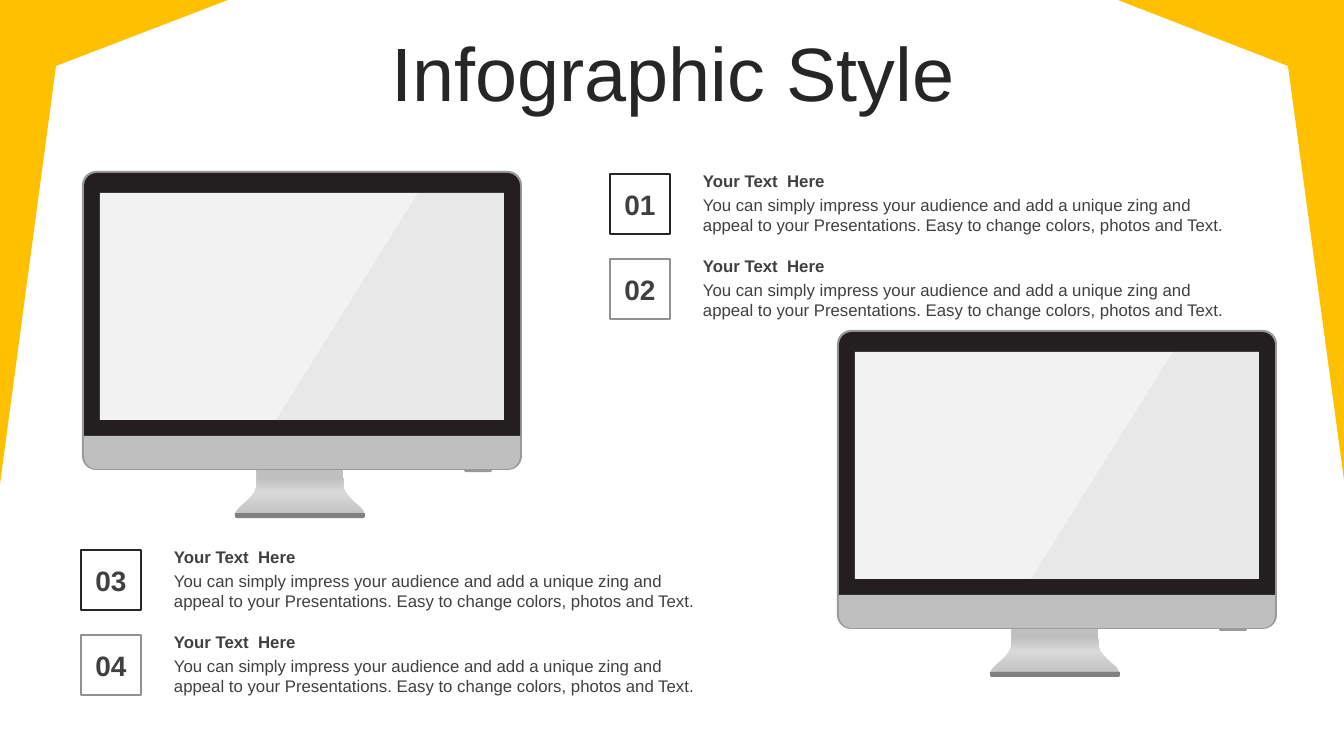
import copy

import pptx
import pptx.dml.color
import pptx.enum.shapes
import pptx.enum.text
import pptx.oxml
import pptx.oxml.ns
import pptx.util
from lxml import etree

SHAPES = pptx.enum.shapes.MSO_SHAPE
ALIGN = pptx.enum.text.PP_ALIGN
ANCHOR = pptx.enum.text.MSO_ANCHOR
SLIDE_WIDTH, SLIDE_HEIGHT = 1344, 756
EMU_PER_PX = 12192000 / SLIDE_WIDTH

HEADING = "Your Text  Here"
DESCRIPTION = (
    "You can simply impress your audience and add a unique zing and "
    "appeal to your Presentations. Easy to change colors, photos and Text."
)


def emu(px):
    return pptx.util.Emu(round(px * EMU_PER_PX))


def color(hex_string):
    return pptx.dml.color.RGBColor.from_string(hex_string)


def bezier(start, control_1, control_2, end, steps=10):
    points = []
    for step in range(steps + 1):
        t = step / steps
        weights = ((1 - t) ** 3, 3 * t * (1 - t) ** 2, 3 * t * t * (1 - t), t ** 3)
        corners = (start, control_1, control_2, end)
        points.append(tuple(sum(w * p[axis] for w, p in zip(weights, corners))
                            for axis in (0, 1)))
    return points


class InfographicSlide:
    """Draw the elements of an infographic slide in one shared style."""

    font = "Arial"
    dark, text_gray, light_gray = "262626", "404040", "929292"
    yellow, silver, edge, bezel = "FFC000", "BFBFBF", "999999", "231F20"
    foot, screen, shine = "808080", "F2F2F2", "D9D9D9"

    def __init__(self, slide):
        self.slide = slide

    def set_text(self, shape, text, size, hex_string, bold=False, align=ALIGN.LEFT):
        frame = shape.text_frame
        frame.word_wrap = True
        frame.text = text
        paragraph = frame.paragraphs[0]
        paragraph.alignment = align
        font = paragraph.runs[0].font
        font.name, font.size, font.bold = self.font, pptx.util.Pt(size), bold
        font.color.rgb = color(hex_string)
        return paragraph

    def text(self, left, top, width, height, text, size, hex_string, **style):
        box = self.slide.shapes.add_textbox(*map(emu, (left, top, width, height)))
        return box, self.set_text(box, text, size, hex_string, **style)

    def title(self, text):
        box, paragraph = self.text(35, 37, 1276, 80, text, 54, self.dark, align=ALIGN.CENTER)
        box.text_frame.vertical_anchor = ANCHOR.MIDDLE
        paragraph.line_spacing = 0.9
        paragraph.space_before = pptx.util.Pt(10)

    def preset(self, kind, left, top, width, height, hex_string, radius=0, rotation=0):
        shape = self.slide.shapes.add_shape(kind, *map(emu, (left, top, width, height)))
        shape.shadow.inherit = False
        shape.fill.solid()
        shape.fill.fore_color.rgb = color(hex_string)
        shape.line.fill.background()
        shape.rotation = rotation
        if radius:
            shape.adjustments[0] = radius / min(width, height)
        return shape

    def outline(self, points, hex_string, alpha=None):
        points = [(emu(x), emu(y)) for x, y in points]
        builder = self.slide.shapes.build_freeform(*points[0])
        builder.add_line_segments(points[1:], close=True)
        shape = builder.convert_to_shape()
        shape.shadow.inherit = False
        shape.line.fill.background()
        shape.fill.solid()
        shape.fill.fore_color.rgb = color(hex_string)
        if alpha is not None:
            fill_color = shape._element.spPr.find(".//" + pptx.oxml.ns.qn("a:srgbClr"))
            etree.SubElement(fill_color, pptx.oxml.ns.qn("a:alpha"), val=str(alpha * 1000))
        return shape

    def stand(self, left, top):
        right_side = bezier((261, 299), (261, 320), (261, 320), (270, 329))
        right_side += bezier((270, 329), (279, 338), (294, 347), (268, 347))[1:]
        left_side = [(436 - x, y) for x, y in reversed(right_side)]
        points = [(left + x, top + y) for x, y in right_side + left_side]
        shape = self.outline(points, self.silver)
        shape.fill.gradient()
        shape.fill.gradient_angle = 90
        stop_list = shape._element.spPr.find(".//" + pptx.oxml.ns.qn("a:gsLst"))
        for stop in list(stop_list):
            stop_list.append(copy.deepcopy(stop))
        stops = ((0, self.silver), (0.53, self.shine), (0.83, self.silver), (1, self.silver))
        for stop, (position, hex_string) in zip(shape.fill.gradient_stops, stops):
            stop.position = position
            stop.color.rgb = color(hex_string)

    def monitor(self, left, top):
        half_round = SHAPES.ROUND_2_SAME_RECTANGLE
        self.stand(left, top)
        self.preset(SHAPES.ROUNDED_RECTANGLE, left, top, 440, 299, self.edge, 14)
        self.preset(half_round, left + 382, top + 297, 28, 4, self.edge, 2, 180)
        self.preset(half_round, left + 2, top + 2, 436, 264, self.bezel, 13)
        self.preset(half_round, left + 153, top + 342, 130, 5, self.foot, 2, 180)
        self.preset(half_round, left + 2, top + 265, 436, 33, self.silver, 13, 180)
        self.preset(SHAPES.RECTANGLE, left + 18, top + 22, 404, 227, self.screen)
        glare = ((336, 22), (422, 22), (422, 249), (194, 249))
        self.outline([(left + x, top + y) for x, y in glare], self.edge, alpha=10)

    def item(self, left, top, number, border):
        square = self.preset(SHAPES.RECTANGLE, left, top, 60, 60, self.screen)
        square.fill.background()
        square.line.color.rgb = color(border)
        square.line.width = pptx.util.Pt(2)
        self.set_text(square, number, 20, self.text_gray, bold=True, align=ALIGN.CENTER)
        square.text_frame.vertical_anchor = ANCHOR.MIDDLE
        self.text(left + 83, top + 16, 563, 50, DESCRIPTION, 12, self.text_gray)
        self.text(left + 83, top - 8, 563, 30, HEADING, 12, self.text_gray, bold=True)


def main():
    presentation = pptx.Presentation()
    presentation.slide_width = emu(SLIDE_WIDTH)
    presentation.slide_height = emu(SLIDE_HEIGHT)
    page = InfographicSlide(presentation.slides.add_slide(presentation.slide_layouts[6]))

    for left, top in ((82, 171), (837, 330)):
        page.monitor(left, top)
    page.title("Infographic Style")
    for group, (left, top) in enumerate(((610, 174), (81, 550))):
        for row, border in enumerate((page.dark, page.light_gray)):
            page.item(left, top + 85 * row, f"{2 * group + row + 1:02d}", border)
    page.outline(((1118, 0), (1344, 0), (1344, 480), (1288, 66)), page.yellow)
    page.outline(((0, 0), (228, 0), (56, 66), (0, 484)), page.yellow)

    presentation.save("out.pptx")


if __name__ == "__main__":
    main()
